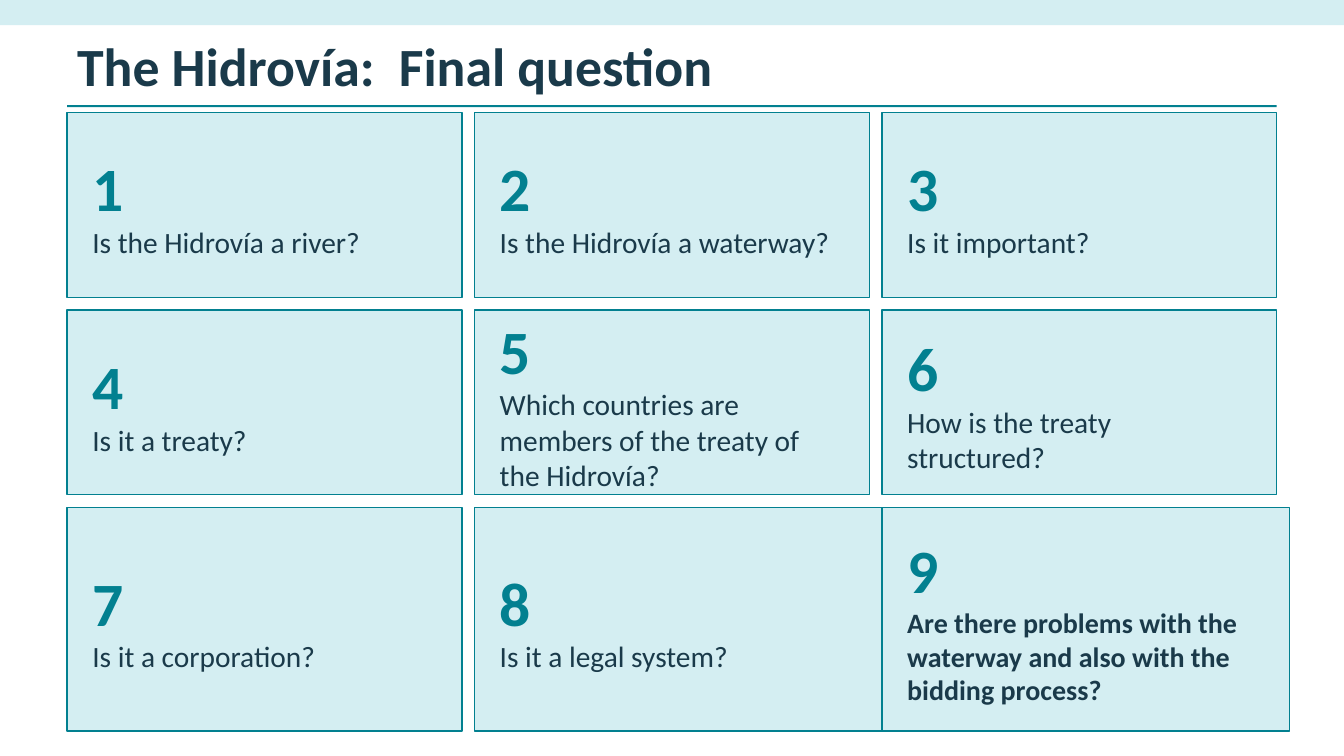
from pptx import Presentation
from pptx.dml.color import RGBColor as Rgb
from pptx.enum.shapes import MSO_SHAPE as Kind
from pptx.enum.text import MSO_ANCHOR as Anchor, PP_ALIGN as Align
from pptx.util import Pt

HUES = {"pale": "D4EEF2", "teal": "028090", "ink": "1A3A4A"}
ASKS = [
    "Is the Hidrovía a river?",
    "Is the Hidrovía a waterway?",
    "Is it important?",
    "Is it a treaty?",
    "Which countries are members of the treaty of the Hidrovía?",
    "How is the treaty structured?",
    "Is it a corporation?",
    "Is it a legal system?",
    "Are there problems with the waterway and also with the bidding process?",
]
WIDE, HIGH = 960, 540
LEFT, SPAN = 48, 864


def hue(name):
    return Rgb.from_string(HUES[name])


def write(para, text, size=21, color="ink", bold=False):
    para.alignment = Align.LEFT
    run = para.add_run()
    run.text = text
    font = run.font
    font.name, font.size, font.bold = "Calibri", Pt(size), bold
    font.color.rgb = hue(color)


def block(slide, box, fill, edge=None):
    shape = slide.shapes.add_shape(Kind.RECTANGLE, *map(Pt, box))
    shape.shadow.inherit = False
    shape.fill.solid()
    shape.fill.fore_color.rgb = hue(fill)
    if edge:
        shape.line.color.rgb = hue(edge)
        shape.line.width = Pt(1)
    else:
        shape.line.fill.background()
    return shape


def header(slide, x, y, w):
    # Title with the rule below it
    label = slide.shapes.add_textbox(Pt(x), Pt(y), Pt(w), Pt(48))
    frame = label.text_frame
    frame.word_wrap = True
    frame.vertical_anchor = Anchor.MIDDLE
    write(frame.paragraphs[0], "The Hidrovía:  Final question", size=38.4, bold=True)
    block(slide, (x, y + 52.5, w, 1.5), "teal")


def card(slide, box, num, ask, **form):
    frame = block(slide, box, "pale", edge="teal").text_frame
    frame.word_wrap = True
    frame.vertical_anchor = Anchor.MIDDLE
    frame.margin_left = frame.margin_right = Pt(18)
    frame.margin_top = frame.margin_bottom = Pt(18)
    write(frame.paragraphs[0], str(num), size=44, color="teal", bold=True)
    write(frame.add_paragraph(), ask, **form)


def grid(slide, x, y, w):
    # Three columns; the last row is taller and its end cards wider
    gap, tall, last = 9, 132, 159.8
    wide = (w - 2 * gap) / 3
    for i, ask in enumerate(ASKS):
        row, col = divmod(i, 3)
        end = row == 2
        form = {"size": 20, "bold": True} if i == 8 else {}
        box = (x + col * (wide + gap), y + row * (tall + gap),
               wide + gap if end and col else wide, last if end else tall)
        card(slide, box, i + 1, ask, **form)


def main():
    deck = Presentation()
    deck.slide_width, deck.slide_height = Pt(WIDE), Pt(HIGH)
    slide = deck.slides.add_slide(deck.slide_layouts[6])
    # Top band
    block(slide, (0, 0, WIDE, 18), "pale")
    header(slide, LEFT, 22.5, SPAN)
    grid(slide, LEFT, 80.4, SPAN)
    deck.save("out.pptx")


if __name__ == "__main__":
    main()
